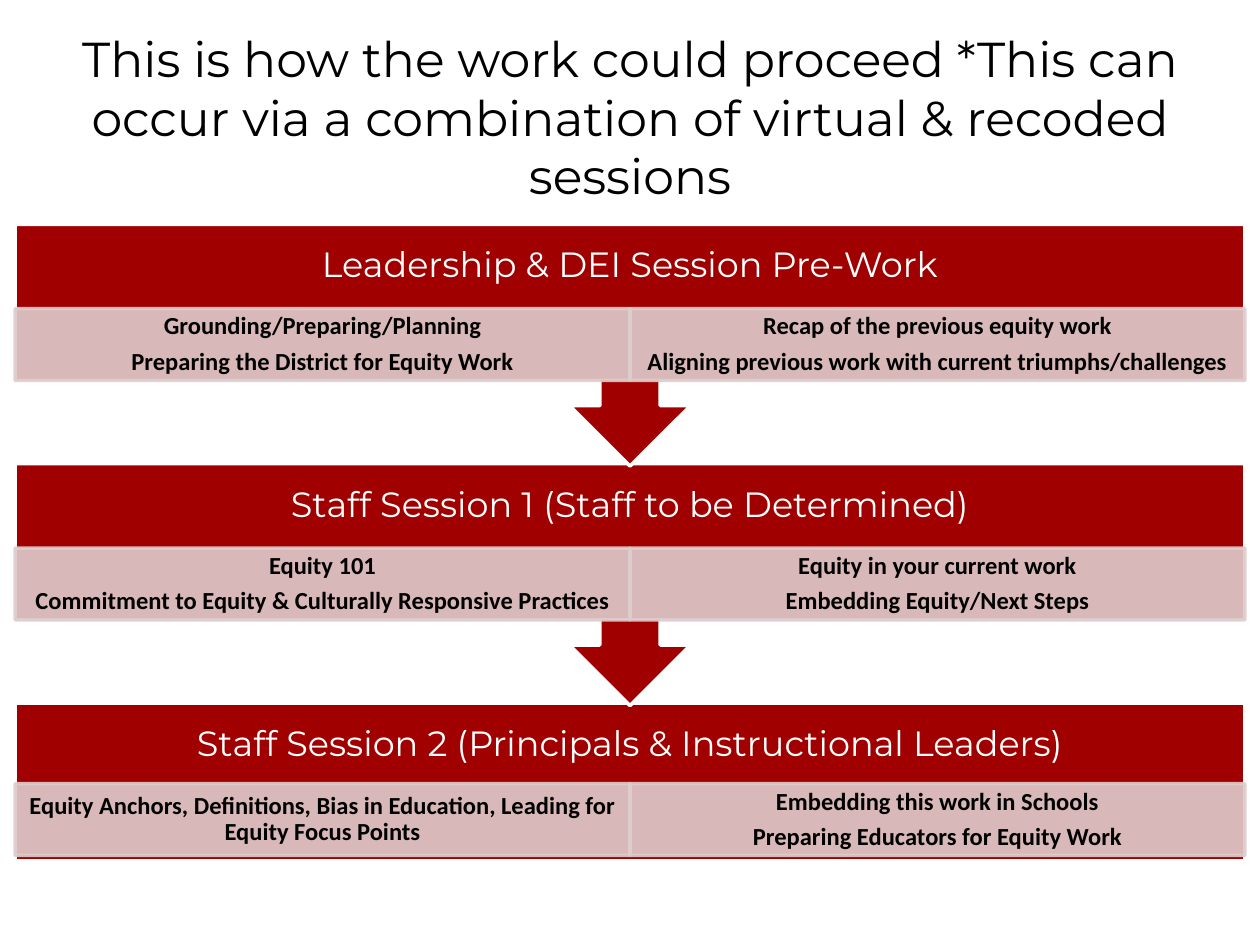
import pptx
import pptx.util
import pptx.dml.color
import pptx.enum.shapes
import pptx.enum.text
import pptx.oxml
import pptx.oxml.ns

PX = 9144  # 100 px to the inch
LEFT, WIDE = 12, 976
HALF = WIDE // 2
SHAPE = pptx.enum.shapes.MSO_SHAPE
TITLE = ("This is how the work could proceed *This can occur via "
         "a combination of virtual & recoded sessions")

# Top, cell top, heading, left lines, right lines
STEPS = [
    (178, 245, "Leadership & DEI Session Pre-Work",
     ["Grounding/Preparing/Planning",
      "Preparing the District for Equity Work"],
     ["Recap of the previous equity work",
      "Aligning previous work with current triumphs/challenges"]),
    (368, 435, "Staff Session 1 (Staff to be Determined)",
     ["Equity 101",
      "Commitment to Equity & Culturally Responsive Practices"],
     ["Equity in your current work", "Embedding Equity/Next Steps"]),
    (558, 622, "Staff Session 2 (Principals & Instructional Leaders)",
     ["Equity Anchors, Definitions, Bias in Education, "
      "Leading for Equity Focus Points"],
     ["Embedding this work in Schools",
      "Preparing Educators for Equity Work"]),
]


def box(*nums):
    return [n * PX for n in nums]


def color(code):
    return pptx.dml.color.RGBColor.from_string(code)


def fade(fmt, pct):
    """Set the opacity of a solid fill in percent."""
    for clr in fmt.iter(pptx.oxml.ns.qn("a:srgbClr")):
        alpha = pptx.oxml.parse_xml(
            f'<a:alpha {pptx.oxml.ns.nsdecls("a")} val="{pct * 1000}"/>')
        clr.append(alpha)


def add_block(slide, kind, area, fill, line):
    shape = slide.shapes.add_shape(kind, *box(*area))
    shape.shadow.inherit = False
    shape.fill.solid()
    shape.fill.fore_color.rgb = color(fill)
    shape.line.color.rgb = color(line)
    shape.line.width = pptx.util.Pt(2)
    return shape


def write(shape, lines, font, size, ink, bold=False, pad=None, gap=None):
    frame = shape.text_frame
    frame.word_wrap = True
    frame.auto_size = pptx.enum.text.MSO_AUTO_SIZE.NONE
    frame.vertical_anchor = pptx.enum.text.MSO_ANCHOR.MIDDLE
    if pad:
        frame.margin_left = frame.margin_right = pad[0] * PX
        frame.margin_top = frame.margin_bottom = pad[1] * PX
    frame.text = "\n".join(lines)
    for para in frame.paragraphs:
        para.alignment = pptx.enum.text.PP_ALIGN.CENTER
        para.font.name = font
        para.font.size = pptx.util.Pt(size)
        para.font.bold = bold
        para.font.color.rgb = color(ink)
        if gap:
            para.line_spacing = 0.9
            para.space_after = pptx.util.Pt(gap)


def add_title(slide):
    title = slide.shapes.title
    title.left, title.top, title.width, title.height = box(50, 30, 900, 125)
    write(title, [TITLE], "Montserrat", 28, "000000")


def add_cell(slide, left, top, lines):
    cell = add_block(slide, SHAPE.RECTANGLE, (left, top, HALF, 57),
                     "DFCCCC", "DFCCCC")
    fade(cell.element.spPr, 90)
    write(cell, lines, "Calibri", 14, "000000", True, (11, 2), 4.9)


def add_step(slide, step, last):
    top, row, head, *cells = step
    # Red body, with an arrow to the next step
    if last:
        add_block(slide, SHAPE.RECTANGLE, (LEFT, top, WIDE, 125),
                  "A00000", "FFFFFF")
    else:
        body = add_block(slide, SHAPE.UP_ARROW_CALLOUT,
                         (LEFT, top, WIDE, 192), "A00000", "FFFFFF")
        body.rotation = 180
    # Heading
    label = slide.shapes.add_textbox(*box(LEFT, top, WIDE, 67))
    write(label, [head], "Montserrat", 20, "FFFFFF", False, (16, 16), 7)
    # Two cells side by side
    for col, lines in enumerate(cells):
        add_cell(slide, LEFT + col * HALF, row, lines)


def main():
    deck = pptx.Presentation()
    deck.slide_width, deck.slide_height = box(1000, 750)
    slide = deck.slides.add_slide(deck.slide_layouts[5])
    add_title(slide)
    # The last step lies at the back
    for step in reversed(STEPS):
        add_step(slide, step, step is STEPS[-1])
    deck.save("out.pptx")


if __name__ == "__main__":
    main()
